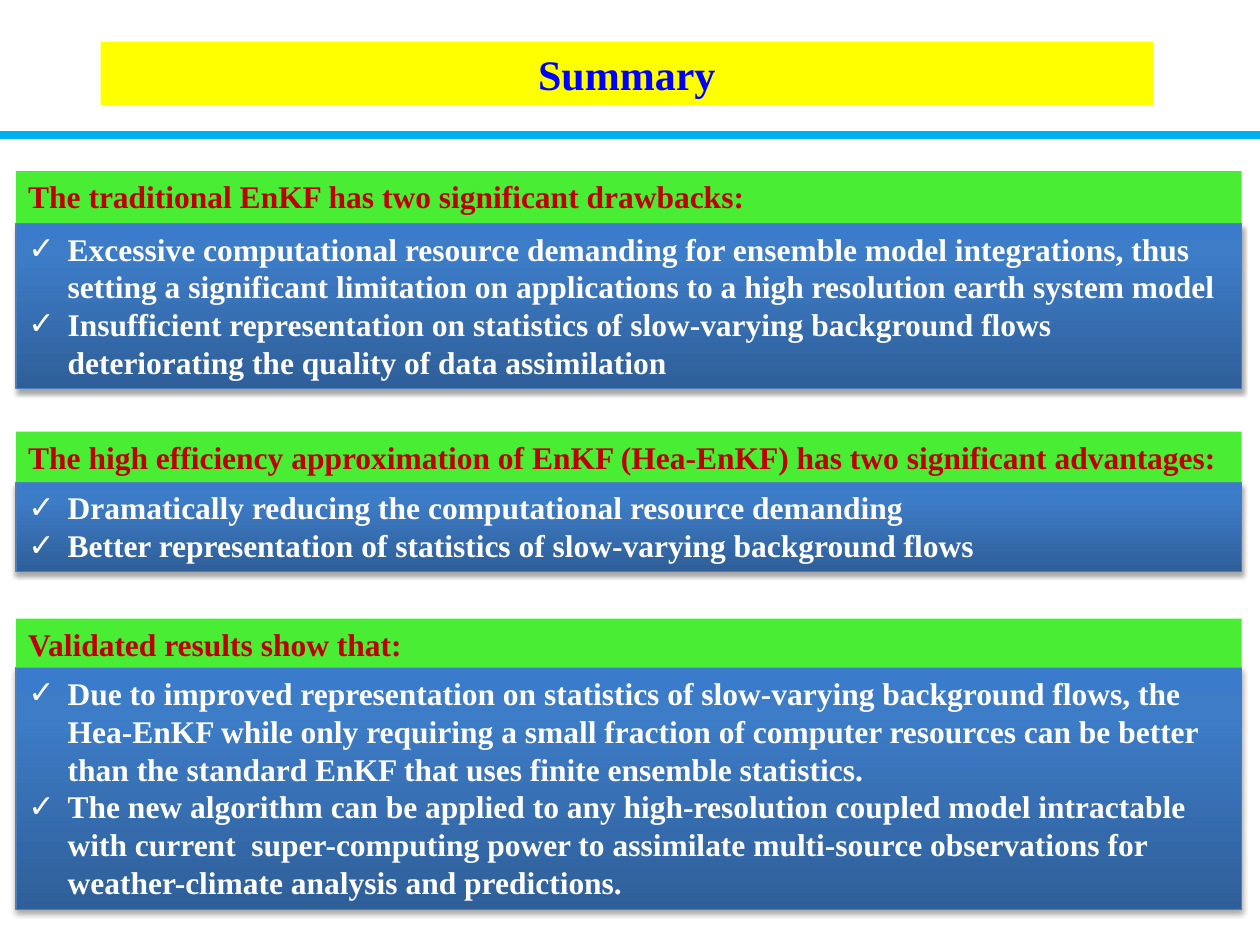
"""Build the summary slide with three headed checklist panels."""
import pptx
import pptx.util
import pptx.dml.color
import pptx.enum.text
import pptx.enum.shapes
import pptx.oxml
import pptx.oxml.ns

Cm, Pt = pptx.util.Cm, pptx.util.Pt
RGB = pptx.dml.color.RGBColor
Text = pptx.enum.text
Kind = pptx.enum.shapes

YELLOW = RGB(0xFF, 0xFF, 0x00)
BLUE = RGB(0x00, 0x00, 0xFF)
SKY = RGB(0x00, 0xB0, 0xF0)
GREEN = RGB(0x49, 0xED, 0x33)
RED = RGB(0xC0, 0x00, 0x00)
WHITE = RGB(0xFF, 0xFF, 0xFF)
EDGE = RGB(0x4B, 0x7E, 0xBC)
STOPS = [
    (0, RGB(0x2F, 0x5F, 0x99)),
    (80, RGB(0x3D, 0x7C, 0xC7)),
    (100, RGB(0x3A, 0x7C, 0xCB)),
]
FONT = "Times New Roman"
TITLE = "Summary"
LEFT, WIDTH, INDENT = 0.32, 24.71, 0.79

PANELS = [
    {
        "head": "The traditional EnKF has two significant drawbacks:",
        "top": 3.45, "split": 4.5, "end": 7.83,
        "list": [
            "Excessive computational resource demanding for ensemble model integrations, thus "
            "setting a significant limitation on applications to a high resolution earth system model",
            "Insufficient representation on statistics of slow-varying background flows "
            "deteriorating the quality of data assimilation",
        ],
    },
    {
        "head": "The high efficiency approximation of EnKF (Hea-EnKF) has two significant advantages:",
        "top": 8.7, "split": 9.72, "end": 11.52,
        "list": [
            "Dramatically reducing the computational resource demanding",
            "Better representation of statistics of slow-varying background flows",
        ],
    },
    {
        "head": "Validated results show that:",
        "top": 12.47, "split": 13.46, "end": 18.34,
        "list": [
            "Due to improved representation on statistics of slow-varying background flows, the "
            "Hea-EnKF while only requiring a small fraction of computer resources can be better "
            "than the standard EnKF that uses finite ensemble statistics.",
            "The new algorithm can be applied to any high-resolution coupled model intractable "
            "with current  super-computing power to assimilate multi-source observations for "
            "weather-climate analysis and predictions.",
        ],
    },
]


def node(tag, inner="", **attrs):
    pairs = "".join(f' {key}="{val}"' for key, val in attrs.items())
    space = pptx.oxml.ns.nsdecls("a")
    return pptx.oxml.parse_xml(f"<a:{tag} {space}{pairs}>{inner}</a:{tag}>")


def place(shape, left, top, width, height):
    shape.left, shape.top = Cm(left), Cm(top)
    shape.width, shape.height = Cm(width), Cm(height)


def write(shape, lines, size, color, align=Text.PP_ALIGN.LEFT, anchor=Text.MSO_ANCHOR.TOP):
    frame = shape.text_frame
    frame.word_wrap = True
    frame.auto_size = Text.MSO_AUTO_SIZE.NONE
    frame.vertical_anchor = anchor
    for i, line in enumerate(lines):
        para = frame.add_paragraph() if i else frame.paragraphs[0]
        para.alignment = align
        para.space_before = Pt(0)
        run = para.add_run()
        run.text = line
        font = run.font
        font.name, font.size, font.bold = FONT, Pt(size), True
        font.color.rgb = color


def paint(shape, color):
    shape.fill.solid()
    shape.fill.fore_color.rgb = color


def check(shape):
    for para in shape.text_frame.paragraphs:
        props = para._p.get_or_add_pPr()
        props.set("marL", str(Cm(INDENT)))
        props.set("indent", str(-Cm(INDENT)))
        props.append(node("buChar", char="✓"))


def shade(shape):
    props = shape._element.spPr
    stops = "".join(
        f'<a:gs pos="{pos * 1000}"><a:srgbClr val="{color}"/></a:gs>' for pos, color in STOPS
    )
    props.append(node("gradFill", f'<a:gsLst>{stops}</a:gsLst><a:lin ang="16200000" scaled="0"/>',
                      rotWithShape=1))
    shape.line.color.rgb = EDGE
    shape.line.width = Pt(0.75)
    props.append(node(
        "effectLst",
        f'<a:outerShdw blurRad="{Pt(3.1)}" dist="{Pt(1.8)}" dir="5400000" rotWithShape="0">'
        '<a:srgbClr val="000000"><a:alpha val="35000"/></a:srgbClr></a:outerShdw>',
    ))


def main():
    deck = pptx.Presentation()
    deck.slide_width, deck.slide_height = Cm(25.4), Cm(19.05)
    slide = deck.slides.add_slide(deck.slide_layouts.get_by_name("Comparison"))
    shapes = slide.shapes
    bodies = [hold for hold in slide.placeholders if hold.placeholder_format.idx]

    rule = shapes.add_connector(Kind.MSO_CONNECTOR.STRAIGHT, 0, Cm(2.72), Cm(25.4), Cm(2.72))
    rule.line.color.rgb = SKY
    rule.line.width = Pt(5)
    rule._element.spPr.append(node("effectLst"))

    title = shapes.title
    place(title, 2.03, 0.84, 21.21, 1.28)
    paint(title, YELLOW)
    write(title, [TITLE], 24, BLUE, Text.PP_ALIGN.CENTER, Text.MSO_ANCHOR.MIDDLE)

    for panel, body in zip(PANELS, bodies):
        top, split, end = panel["top"], panel["split"], panel["end"]
        head = shapes.add_shape(Kind.MSO_SHAPE.RECTANGLE, 0, 0, 0, 0)
        place(head, LEFT, top, WIDTH, split - top)
        head.shadow.inherit = False
        paint(head, GREEN)
        head.line.fill.background()
        write(head, [panel["head"]], 18, RED)
        place(body, LEFT, split, WIDTH, end - split)
        shade(body)
        write(body, panel["list"], 18, WHITE)
        check(body)

    for spare in bodies[len(PANELS):]:
        spare._element.getparent().remove(spare._element)
    deck.save("out.pptx")


if __name__ == "__main__":
    main()
